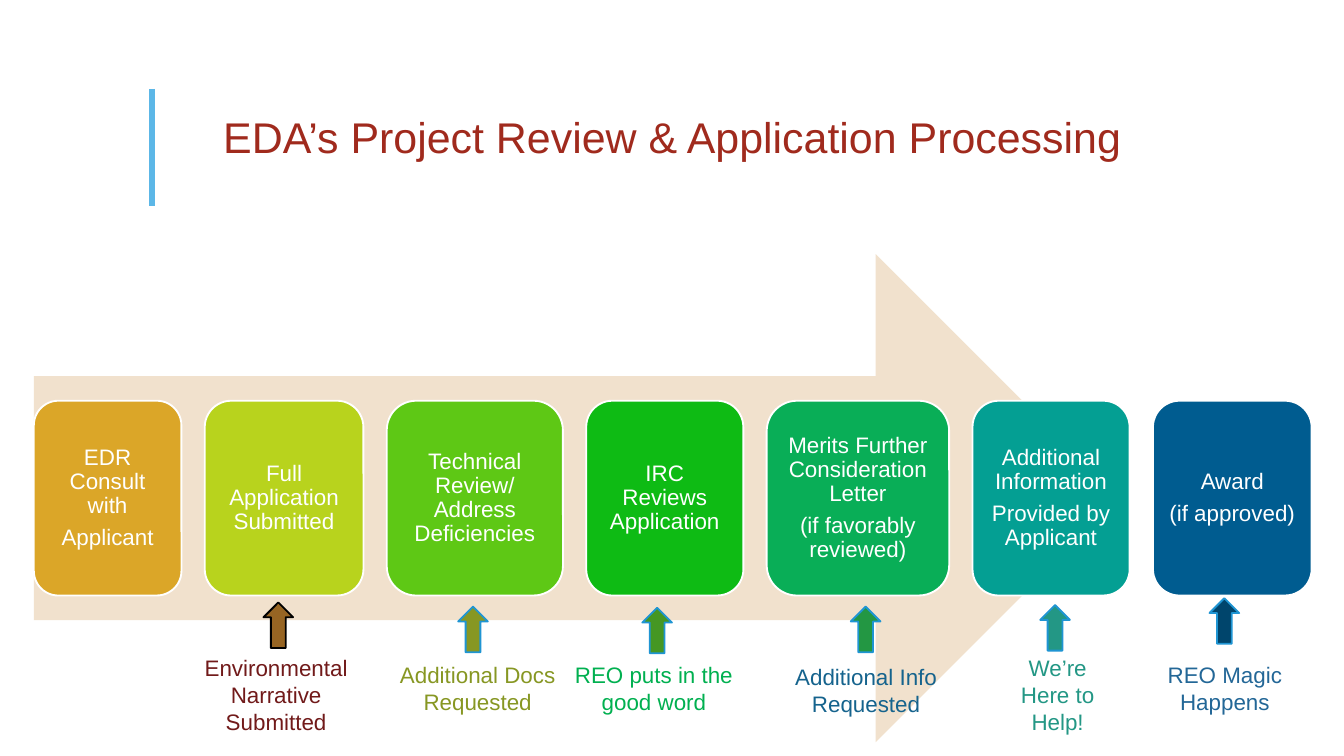
from dataclasses import dataclass

from pptx import Presentation
from pptx.dml.color import RGBColor
from pptx.enum.shapes import MSO_CONNECTOR, MSO_SHAPE
from pptx.enum.text import MSO_ANCHOR, MSO_AUTO_SIZE, PP_ALIGN
from pptx.oxml.ns import qn
from pptx.util import Cm, Pt
from lxml import etree

CENTER = PP_ALIGN.CENTER
MIDDLE, TOP = MSO_ANCHOR.MIDDLE, MSO_ANCHOR.TOP
NO_FIT = MSO_AUTO_SIZE.NONE
BLOCK, ROUND, UP = MSO_SHAPE.RIGHT_ARROW, MSO_SHAPE.ROUNDED_RECTANGLE, MSO_SHAPE.UP_ARROW
STRAIGHT = MSO_CONNECTOR.STRAIGHT
TITLE_ONLY = 5


@dataclass(frozen=True)
class Theme:
    font: str = "Arial"
    title: str = "A02A1D"
    rule: str = "5CB7E7"
    band: str = "F1E1CD"
    light: str = "FFFFFF"
    edge: str = "1F95D3"
    dark: str = "000000"
    head: int = 23
    body: int = 12


THEME = Theme()

# width, fill, paragraphs
STEPS = [
    (2.79, "DBA628", ["EDR Consult with", "Applicant"]),
    (3.0, "B8D31D", ["Full Application Submitted"]),
    (3.33, "5EC815", ["Technical Review/ Address Deficiencies"]),
    (2.97, "0EBB14", ["IRC Reviews Application"]),
    (3.45, "09AE57", ["Merits Further Consideration Letter", "(if favorably reviewed)"]),
    (2.97, "049F93", ["Additional Information", "Provided by Applicant"]),
    (3.0, "005C90", ["Award", "(if approved)"]),
]

# paragraphs, text colour, text centre, text top, text width, text height,
# arrow centre, arrow top, arrow fill, arrow edge
NOTES = [
    (["Environmental Narrative", "Submitted"], "711A1A", 5.22, 12.24, 4.2, 1.8,
     5.26, 11.38, "976523", THEME.dark),
    (["Additional Docs Requested"], "879723", 9.03, 12.37, 4.2, 1.28,
     8.94, 11.46, "879723", THEME.edge),
    (["REO puts in the good word"], "00B050", 12.36, 12.37, 4.2, 1.28,
     12.42, 11.48, "459723", THEME.edge),
    (["Additional Info Requested"], "15638D", 16.37, 12.4, 4.2, 1.28,
     16.36, 11.46, "239743", THEME.edge),
    (["We’re Here to Help!"], "239785", 19.99, 12.24, 2.6, 1.8,
     19.94, 11.43, "239785", THEME.edge),
    (["REO Magic Happens"], "236797", 23.15, 12.37, 4.2, 1.28,
     23.14, 11.3, "00456C", THEME.edge),
]


def rgb(code):
    return RGBColor.from_string(code)


def write(frame, texts, size, color, anchor=TOP, pad=None, **form):
    """Fill a text frame with centred paragraphs; form holds paragraph formats."""
    frame.word_wrap = True
    frame.auto_size = NO_FIT
    frame.vertical_anchor = anchor
    if pad is not None:
        for side in ("left", "top", "right", "bottom"):
            setattr(frame, f"margin_{side}", Cm(pad))
    for i, text in enumerate(texts):
        para = frame.paragraphs[0] if i == 0 else frame.add_paragraph()
        para.text = text
        for name, value in {"alignment": CENTER, **form}.items():
            setattr(para, name, value)
        font = para.runs[0].font
        for name, value in {"name": THEME.font, "size": Pt(size)}.items():
            setattr(font, name, value)
        font.color.rgb = rgb(color)


def add_block(slide, kind, box, fill, edge=None):
    shape = slide.shapes.add_shape(kind, *map(Cm, box))
    shape.shadow.inherit = False
    shape.fill.solid()
    shape.fill.fore_color.rgb = rgb(fill)
    if edge:
        shape.line.color.rgb = rgb(edge)
        shape.line.width = Pt(1)
    else:
        shape.line.fill.background()
    return shape


def add_rule(slide, x, top, end):
    line = slide.shapes.add_connector(STRAIGHT, Cm(x), Cm(top), Cm(x), Cm(end))
    line.line.color.rgb = rgb(THEME.rule)
    line.line.width = Pt(3)
    etree.SubElement(line._element.spPr, qn("a:effectLst"))


def add_title(slide, text):
    title = slide.shapes.title
    place = {"left": 2.8, "top": 1.55, "width": 19.84, "height": 2.18}
    for name, value in place.items():
        setattr(title, name, Cm(value))
    write(title.text_frame, [text], THEME.head, THEME.title, MIDDLE, line_spacing=0.9)


def add_steps(slide, left=0.64, top=7.57, height=3.68, gap=0.44):
    for width, fill, texts in STEPS:
        card = add_block(slide, ROUND, (left, top, width, height), fill, THEME.light)
        write(card.text_frame, texts, THEME.body, THEME.light, MIDDLE, 0.13,
              line_spacing=0.9, space_after=Pt(4.2))
        left += width + gap


def add_note(slide, texts, color, mid, top, width, height, tip, peak, fill, edge):
    """Add a caption and the small arrow that points up from it."""
    box = slide.shapes.add_textbox(*map(Cm, (mid - width / 2, top, width, height)))
    write(box.text_frame, texts, THEME.body, color)
    add_block(slide, UP, (tip - 0.28, peak, 0.56, 0.86), fill, edge)


def main():
    deck = Presentation()
    deck.slide_width, deck.slide_height = Cm(25.4), Cm(14.28)
    slide = deck.slides.add_slide(deck.slide_layouts[TITLE_ONLY])
    add_title(slide, "EDA’s Project Review & Application Processing")
    add_rule(slide, 2.87, 1.68, 3.89)
    add_block(slide, BLOCK, (0.64, 4.8, 20.52, 9.22), THEME.band)
    add_steps(slide)
    for note in NOTES:
        add_note(slide, *note)
    deck.save("out.pptx")


if __name__ == "__main__":
    main()
